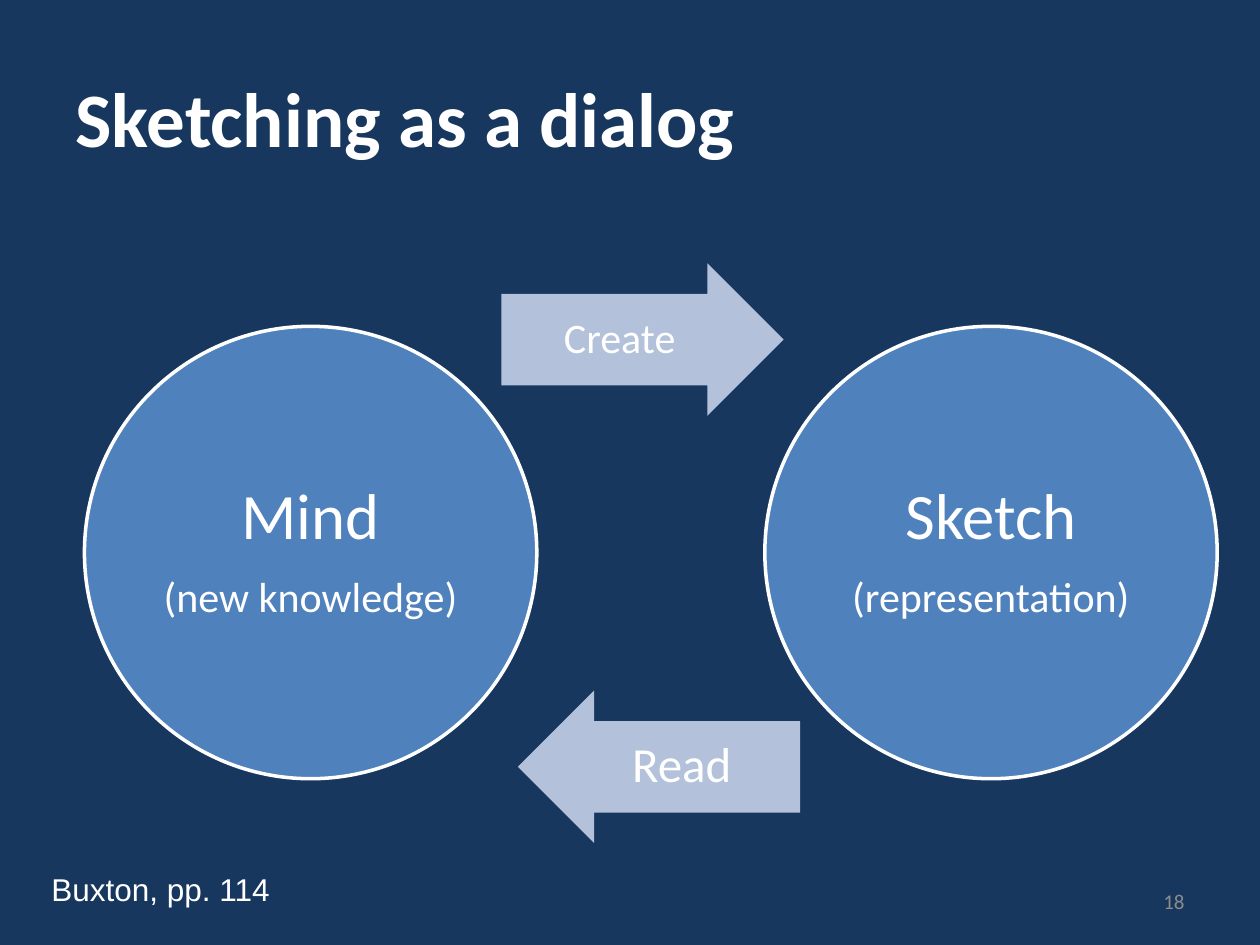
"""Build the slide that shows sketching as a dialog between mind and sketch."""
import math
from dataclasses import dataclass

import pptx
import pptx.dml.color
import pptx.enum.shapes
import pptx.enum.text
import pptx.util

SHAPE = pptx.enum.shapes.MSO_SHAPE
ALIGN = pptx.enum.text.PP_ALIGN
MIDDLE = pptx.enum.text.MSO_ANCHOR.MIDDLE
CELL = 0.1
COLS, ROWS = 100, 75


@dataclass(frozen=True)
class Theme:
    """Colours, fonts and type sizes of the slide."""

    back: str = "17375E"
    circle: str = "4F81BD"
    arrow: str = "B3C1DB"
    light: str = "FFFFFF"
    muted: str = "8C8C8C"
    body: str = "Calibri"
    source: str = "Arial"
    title: int = 44
    name: int = 37
    read: int = 28
    detail: int = 24
    note: int = 18
    number: int = 12


THEME = Theme()


def grid(*cells):
    """Turn grid cells into lengths."""
    return [pptx.util.Inches(c * CELL) for c in cells]


def rgb(code):
    """Return the colour for a hex code."""
    return pptx.dml.color.RGBColor.from_string(code)


def assign(obj, values):
    """Set each attribute named in a dict of format values."""
    for name, value in values.items():
        setattr(obj, name, value)


def write(tf, lines, color=THEME.light, font=THEME.body, bold=False, **para):
    """Fill a text frame with (text, size) lines."""
    for i, (text, size) in enumerate(lines):
        p = tf.add_paragraph() if i else tf.paragraphs[0]
        assign(p, para)
        r = p.add_run()
        r.text = text
        assign(r.font, {"size": pptx.util.Pt(size), "name": font, "bold": bold})
        r.font.color.rgb = rgb(color)


def add_text(s, box, lines, inset=None, wrap=True, anchor=MIDDLE, **style):
    """Add a text box on the grid."""
    tf = s.shapes.add_textbox(*grid(*box)).text_frame
    assign(tf, {"word_wrap": wrap, "vertical_anchor": anchor})
    if inset is not None:
        sides = ("left", "top", "right", "bottom")
        assign(tf, {f"margin_{side}": pptx.util.Inches(inset) for side in sides})
    write(tf, lines, **style)


def add_label(s, box, lines, inset):
    """Add the centred label of a diagram part."""
    after = pptx.util.Pt(round(lines[0][1] * 0.35))
    add_text(s, box, lines, inset, alignment=ALIGN.CENTER, line_spacing=0.9, space_after=after)


def add_part(s, kind, box, fill):
    """Add a filled shape without outline or shadow."""
    sp = s.shapes.add_shape(kind, *grid(*box))
    sp.shadow.inherit = False
    sp.fill.solid()
    sp.fill.fore_color.rgb = rgb(fill)
    sp.line.fill.background()
    return sp


def add_circle(s, x, name, detail):
    """Add a circle with its name and detail in the inscribed square."""
    y, size = 25.9, 35.9
    sp = add_part(s, SHAPE.OVAL, (x, y, size, size), THEME.circle)
    sp.line.color.rgb = rgb(THEME.light)
    sp.line.width = pptx.util.Pt(2)
    side = size / math.sqrt(2)
    gap = (size - side) / 2
    lines = [(name, THEME.name), (detail, THEME.detail)]
    add_label(s, (x + gap, y + gap, side, side), lines, 0.05)


def add_arrow(s, x, y, text, size, back=False):
    """Add a block arrow with its label over the shaft."""
    w, h, shaft, head = 22.4, 12.1, 0.6, 0.5
    sp = add_part(s, SHAPE.RIGHT_ARROW, (x, y, w, h), THEME.arrow)
    sp.adjustments[0], sp.adjustments[1] = shaft, head
    sp.rotation = 180 if back else 0
    trim = h * head * shaft
    box = (x + trim * back, y + h * (1 - shaft) / 2, w - trim, h * shaft)
    add_label(s, box, [(text, size)], 0)


def add_title(s, text):
    """Place and format the title placeholder."""
    sp = s.shapes.title
    assign(sp, dict(zip(("left", "top", "width", "height"), grid(5, 3, 90, 12.5))))
    sp.text_frame.vertical_anchor = MIDDLE
    write(sp.text_frame, [(text, THEME.title)], bold=True, alignment=ALIGN.LEFT)


def main():
    """Build and save the presentation."""
    prs = pptx.Presentation()
    prs.slide_width, prs.slide_height = grid(COLS, ROWS)
    s = prs.slides.add_slide(prs.slide_layouts[5])
    s.background.fill.solid()
    s.background.fill.fore_color.rgb = rgb(THEME.back)
    add_title(s, "Sketching as a dialog")
    add_text(s, (71.7, 69.5, 23.3, 4), [("18", THEME.number)],
             color=THEME.muted, alignment=ALIGN.RIGHT)
    add_circle(s, 6.7, "Mind", "(new knowledge)")
    add_arrow(s, 39.8, 20.9, "Create", THEME.detail)
    add_circle(s, 60.7, "Sketch", "(representation)")
    add_arrow(s, 41.1, 54.8, "Read", THEME.read, back=True)
    add_text(s, (3.1, 68.6, 19.5, 4), [("Buxton, pp. 114", THEME.note)], wrap=False,
             anchor=pptx.enum.text.MSO_ANCHOR.TOP, font=THEME.source)
    prs.save("out.pptx")


if __name__ == "__main__":
    main()
